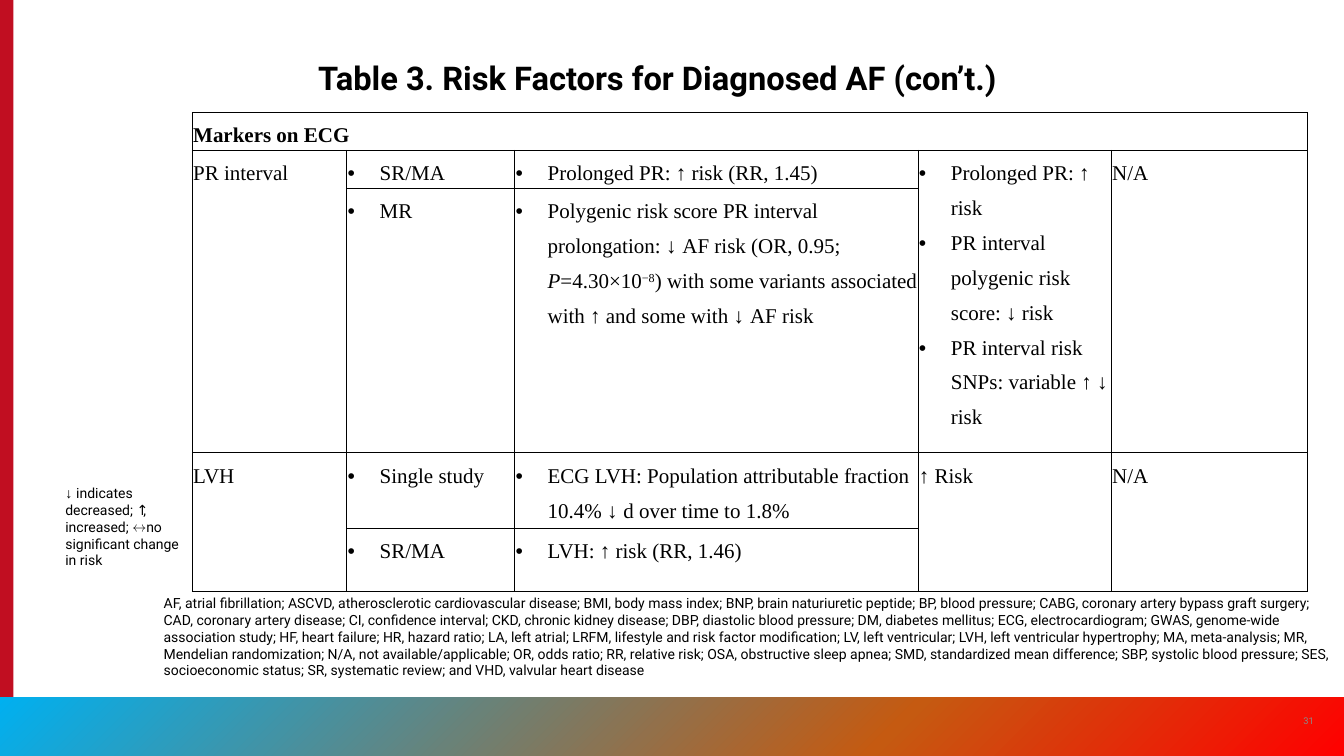
from dataclasses import dataclass

from lxml import etree
from pptx import Presentation, util as u
from pptx.dml.color import RGBColor
from pptx.enum import shapes, text
from pptx.oxml import parse_xml
from pptx.oxml.ns import nsdecls, qn


@dataclass(frozen=True)
class Theme:
    ink: str = "000000"
    muted: str = "8A8B8A"
    stripe: str = "C10E21"
    band: tuple = ((0, "00B0F0"), (66, "C55A11"), (100, "FF0000"))
    sans: str = "Roboto"
    serif: str = "Times New Roman"
    symbol: str = "Arial"
    title: int = 28
    body: int = 18
    note: int = 12
    number: int = 8


THEME = Theme()
COLUMNS, ROWS = 16, 9
CELL = u.Inches(1)  # one square of the slide grid

TABLE_COLUMNS = (1.84, 2, 4.8, 2.3, 2.34)
TABLE_ROWS = (0.41, 0.41, 3.03, 0.86, 0.75, 0.41)
FULL_WIDTH_ROWS = (0, 5)
TALL_CELLS = [(row, col) for row in (1, 3) for col in (0, 3, 4)]

DOWN = ("↓ ", {"name": THEME.symbol})

# (row, column): paragraphs, each a string or a list of (text, style) spans
PLAIN_CELLS = {
    (0, 0): [[("Markers on ECG", {"bold": True})]],
    (1, 0): ["PR interval"],
    (1, 4): ["N/A"],
    (3, 0): ["LVH"],
    (3, 3): ["↑ Risk"],
    (3, 4): ["N/A"],
}
BULLET_CELLS = {
    (1, 1): ["SR/MA"],
    (1, 2): ["Prolonged PR: ↑ risk (RR, 1.45)"],
    (1, 3): ["Prolonged PR: ↑ risk",
             "PR interval polygenic risk score: ↓ risk",
             "PR interval risk SNPs: variable ↑ ↓ risk"],
    (2, 1): ["MR"],
    (2, 2): [[("Polygenic risk score PR interval prolongation: ", {}), DOWN,
              ("AF risk (OR, 0.95; ", {}), ("P", {"italic": True}),
              ("=4.30×10", {}), ("−8", {"raised": True}),
              (") with some variants associated with ↑ and some with ", {}),
              DOWN, ("AF risk", {})]],
    (3, 1): ["Single study"],
    (3, 2): [[("ECG LVH: Population attributable fraction 10.4% ", {}), DOWN,
              ("d over time to 1.8%", {})]],
    (4, 1): ["SR/MA"],
    (4, 2): ["LVH: ↑ risk (RR, 1.46)"],
}

LEGEND = [DOWN, ("indicates decreased; ↑, increased; ↔no significant change in risk", {})]
ABBREVIATIONS = [
    "AF, atrial fibrillation", "ASCVD, atherosclerotic cardiovascular disease",
    "BMI, body mass index", "BNP, brain naturiuretic peptide", "BP, blood pressure",
    "CABG, coronary artery bypass graft surgery", "CAD, coronary artery disease",
    "CI, confidence interval", "CKD, chronic kidney disease",
    "DBP, diastolic blood pressure", "DM, diabetes mellitus", "ECG, electrocardiogram",
    "GWAS, genome-wide association study", "HF, heart failure", "HR, hazard ratio",
    "LA, left atrial", "LRFM, lifestyle and risk factor modification",
    "LV, left ventricular", "LVH, left ventricular hypertrophy", "MA, meta-analysis",
    "MR, Mendelian randomization", "N/A, not available/applicable", "OR, odds ratio",
    "RR, relative risk", "OSA, obstructive sleep apnea",
    "SMD, standardized mean difference", "SBP, systolic blood pressure",
    "SES, socioeconomic status", "SR, systematic review",
    "and VHD, valvular heart disease",
]


def grid(*cells):
    """Turn grid columns and rows into slide lengths."""
    return [int(CELL * cell) for cell in cells]


def write(para, content, size, font, color=THEME.ink, bold=False):
    spans = [(content, {})] if isinstance(content, str) else content
    for words, style in spans:
        span = para.add_run()
        span.text = words
        span.font.size = u.Pt(size)
        span.font.name = style.get("name", font)
        span.font.bold = style.get("bold", bold)
        span.font.italic = style.get("italic", False)
        span.font.color.rgb = RGBColor.from_string(color)
        if style.get("raised"):
            span.font._element.set("baseline", "30000")


def add_bullet(para):
    props = para._p.get_or_add_pPr()
    indent = u.Inches(0.38)
    props.set("marL", str(indent))
    props.set("indent", str(-indent))
    etree.SubElement(props, qn("a:buFont")).set("typeface", THEME.symbol)
    etree.SubElement(props, qn("a:buChar")).set("char", "•")


def add_text(page, place, content, size, color=THEME.ink, bold=False,
             anchor=text.MSO_ANCHOR.TOP, grow=False):
    frame = page.shapes.add_textbox(*grid(*place)).text_frame
    frame.word_wrap = True
    frame.vertical_anchor = anchor
    if grow:
        frame.auto_size = text.MSO_AUTO_SIZE.SHAPE_TO_FIT_TEXT
    para = frame.paragraphs[0]
    write(para, content, size, THEME.sans, color, bold)
    return para


def add_block(page, place):
    block = page.shapes.add_shape(shapes.MSO_SHAPE.RECTANGLE, *grid(*place))
    block.shadow.inherit = False
    block.line.fill.background()
    return block


def add_band(page, place):
    band = add_block(page, place)
    stops = "".join(f'<a:gs pos="{share * 1000}"><a:srgbClr val="{color}"/></a:gs>'
                    for share, color in THEME.band)
    band.fill.background()
    props = band._element.spPr
    props.replace(props.find(qn("a:noFill")), parse_xml(
        f'<a:gradFill {nsdecls("a")} rotWithShape="1"><a:gsLst>{stops}</a:gsLst>'
        '<a:lin ang="2700000" scaled="0"/></a:gradFill>'))


def style_cell(cell, sides):
    """Rule the named sides and leave the cell unfilled."""
    cell.margin_left = cell.margin_right = u.Inches(0.01)
    cell.margin_top = cell.margin_bottom = 0
    props = cell._tc.get_or_add_tcPr()
    for side in "LRTB":
        line = etree.SubElement(props, qn(f"a:ln{side}"), w=str(u.Pt(1)))
        if side in sides:
            fill = etree.SubElement(line, qn("a:solidFill"))
            etree.SubElement(fill, qn("a:srgbClr"), val=THEME.ink)
        else:
            etree.SubElement(line, qn("a:noFill"))
    cell.fill.background()


def fill_cells(table, contents, bulleted):
    for (row, col), paragraphs in contents.items():
        frame = table.cell(row, col).text_frame
        for index, content in enumerate(paragraphs):
            para = frame.add_paragraph() if index else frame.paragraphs[0]
            para.line_spacing = 1.5
            if bulleted:
                add_bullet(para)
            write(para, content, THEME.body, THEME.serif)


def add_risk_table(page, left, top):
    place = grid(left, top, sum(TABLE_COLUMNS), sum(TABLE_ROWS))
    table = page.shapes.add_table(len(TABLE_ROWS), len(TABLE_COLUMNS), *place).table
    table.first_row = table.horz_banding = False
    for column, width in zip(table.columns, grid(*TABLE_COLUMNS)):
        column.width = width
    for row, height in zip(table.rows, grid(*TABLE_ROWS)):
        row.height = height

    last = len(TABLE_ROWS) - 1
    for row in range(len(TABLE_ROWS)):
        for col in range(len(TABLE_COLUMNS)):
            style_cell(table.cell(row, col), "T" if row == last else "LRTB")

    for row in FULL_WIDTH_ROWS:
        table.cell(row, 0).merge(table.cell(row, len(TABLE_COLUMNS) - 1))
    for row, col in TALL_CELLS:
        table.cell(row, col).merge(table.cell(row + 1, col))
    fill_cells(table, PLAIN_CELLS, bulleted=False)
    fill_cells(table, BULLET_CELLS, bulleted=True)


def main():
    deck = Presentation()
    deck.slide_width, deck.slide_height = grid(COLUMNS, ROWS)
    page = deck.slides.add_slide(deck.slide_layouts[6])

    # Side stripe and footer band
    stripe = add_block(page, (0, 0, 0.16, ROWS))
    stripe.fill.solid()
    stripe.fill.fore_color.rgb = RGBColor.from_string(THEME.stripe)
    add_band(page, (0, 8.3, COLUMNS, 0.7))

    # Page number and title
    number = add_text(page, (15.34, 8.34, 0.48, 0.48), "31", THEME.number,
                      THEME.muted, anchor=text.MSO_ANCHOR.MIDDLE)
    number.alignment = text.PP_ALIGN.CENTER
    title = add_text(page, (3.69, 0.63, 8.62, 0.58),
                     "Table 3. Risk Factors for Diagnosed AF (con’t.)",
                     THEME.title, bold=True, anchor=text.MSO_ANCHOR.BOTTOM)
    title.line_spacing = 0.9

    # Table and its notes
    add_risk_table(page, 2.29, 1.34)
    add_text(page, (0.68, 5.72, 1.57, 1.11), LEGEND, THEME.note, grow=True)
    add_text(page, (1.85, 7.03, 14.17, 1.11), "; ".join(ABBREVIATIONS),
             THEME.note, grow=True)

    deck.save("out.pptx")


if __name__ == "__main__":
    main()
